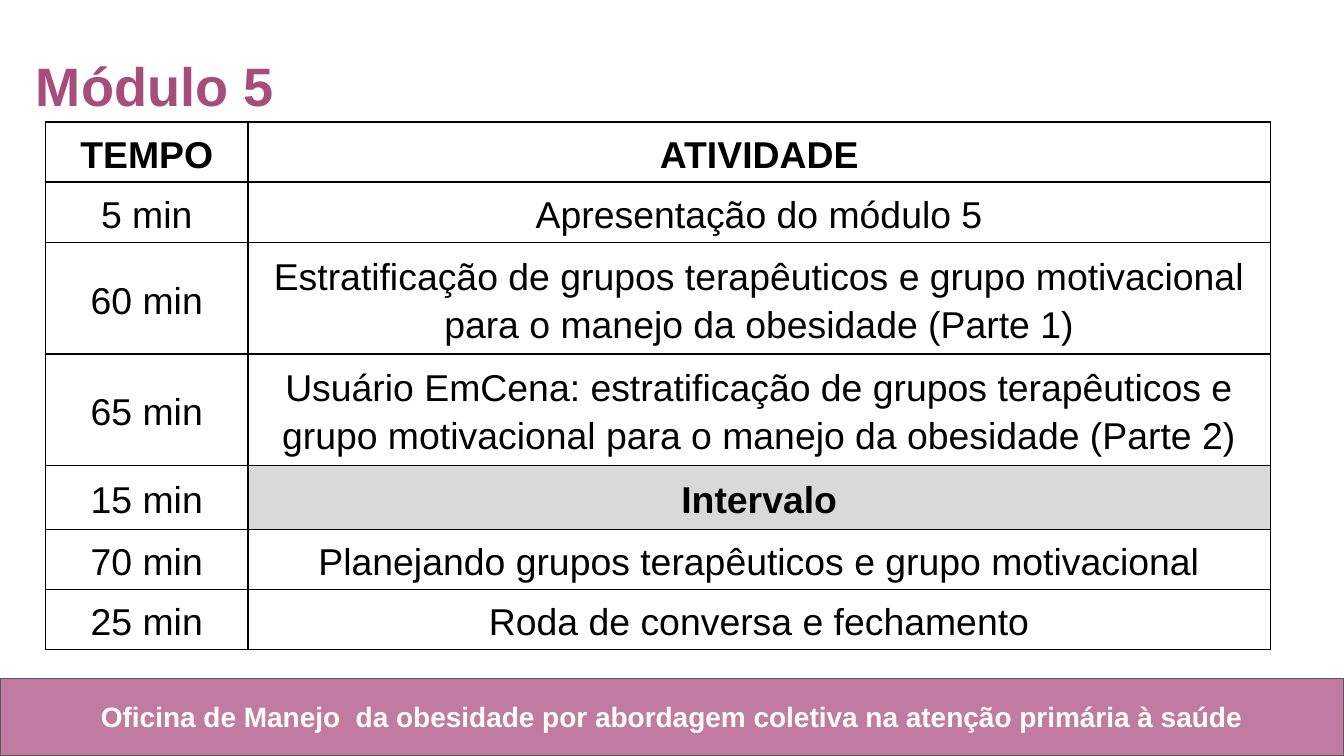
from typing import NamedTuple

from lxml import etree
from pptx import Presentation
from pptx import util as u
from pptx.dml import color
from pptx.enum import shapes, text
from pptx.oxml import ns

FONT = "Arial"
BLACK, WHITE, GREY = "000000", "FFFFFF", "D9D9D9"
PINK, PLUM, OUTLINE = "C27BA0", "A64D79", "595959"


class Box(NamedTuple):
    left: float
    top: float
    width: float
    height: float

    def lengths(self) -> list[u.Cm]:
        return [u.Cm(value) for value in self]


class Activity(NamedTuple):
    time: str
    title: str
    height: float = 1.12
    time_bold: bool = False
    title_bold: bool = False
    title_fill: str = WHITE


AGENDA = [
    Activity("TEMPO", "ATIVIDADE", time_bold=True, title_bold=True),
    Activity("5 min", "Apresentação do módulo 5"),
    Activity("60 min", "Estratificação de grupos terapêuticos e grupo motivacional "
             "para o manejo da obesidade (Parte 1)", 2.09),
    Activity("65 min", "Usuário EmCena: estratificação de grupos terapêuticos e "
             "grupo motivacional para o manejo da obesidade (Parte 2)", 2.09),
    Activity("15 min", "Intervalo", 1.21, title_bold=True, title_fill=GREY),
    Activity("70 min", "Planejando grupos terapêuticos e grupo motivacional"),
    Activity("25 min", "Roda de conversa e fechamento"),
]


def rgb(value: str) -> color.RGBColor:
    return color.RGBColor.from_string(value)


def write(frame, words: str, size: float, ink: str, bold: bool,
          align=text.PP_ALIGN.CENTER, spacing: float = 1.0) -> None:
    frame.word_wrap = True
    paragraph = frame.paragraphs[0]
    paragraph.text = words
    paragraph.alignment = align
    paragraph.line_spacing = spacing
    font = paragraph.font
    font.name, font.size, font.bold = FONT, u.Pt(size), bold
    font.color.rgb = rgb(ink)


def add_text(slide, box: Box, words: str, size: float, ink: str, **style) -> None:
    frame = slide.shapes.add_textbox(*box.lengths()).text_frame
    frame.margin_left = frame.margin_right = u.Cm(0.25)
    frame.margin_top = frame.margin_bottom = u.Cm(0.25)
    write(frame, words, size, ink, True, **style)


def add_band(slide, box: Box) -> None:
    band = slide.shapes.add_shape(shapes.MSO_SHAPE.RECTANGLE, *box.lengths())
    band.shadow.inherit = False
    band.fill.solid()
    band.fill.fore_color.rgb = rgb(PINK)
    band.line.color.rgb = rgb(OUTLINE)
    band.line.width = u.Pt(0.75)


def border(cell) -> None:
    properties = cell._tc.get_or_add_tcPr()
    for position, side in enumerate(("lnL", "lnR", "lnT", "lnB")):
        line = etree.Element(ns.qn(f"a:{side}"), w=str(u.Pt(1)))
        fill = etree.SubElement(line, ns.qn("a:solidFill"))
        etree.SubElement(fill, ns.qn("a:srgbClr"), val=BLACK)
        properties.insert(position, line)


def fill_cell(cell, words: str, bold: bool, fill: str) -> None:
    cell.margin_left = cell.margin_right = u.Cm(0.08)
    cell.margin_top = cell.margin_bottom = u.Cm(0.08)
    cell.vertical_anchor = text.MSO_ANCHOR.MIDDLE
    cell.fill.solid()
    cell.fill.fore_color.rgb = rgb(fill)
    write(cell.text_frame, words, 20, BLACK, bold, spacing=1.15)
    border(cell)


def add_agenda(slide, left: float, top: float, widths: tuple[float, float]) -> None:
    box = Box(left, top, sum(widths), sum(item.height for item in AGENDA))
    table = slide.shapes.add_table(len(AGENDA), len(widths), *box.lengths()).table
    table.first_row = table.horz_banding = False
    for column, width in zip(table.columns, widths):
        column.width = u.Cm(width)
    for row, item in zip(table.rows, AGENDA):
        row.height = u.Cm(item.height)
        time, title = row.cells
        fill_cell(time, item.time, item.time_bold, WHITE)
        fill_cell(title, item.title, item.title_bold, item.title_fill)


def main() -> None:
    deck = Presentation()
    deck.slide_width, deck.slide_height = u.Cm(25.4), u.Cm(14.29)
    slide = deck.slides.add_slide(deck.slide_layouts[6])
    add_band(slide, Box(0, 12.83, 25.4, 1.46))
    add_text(slide, Box(0.85, 12.98, 23.7, 1.15),
             "Oficina de Manejo  da obesidade por abordagem coletiva na atenção primária à saúde",
             15, WHITE)
    add_text(slide, Box(0.43, 0.56, 19.23, 1.88), "Módulo 5", 29, PLUM,
             align=text.PP_ALIGN.LEFT, spacing=1.15)
    add_agenda(slide, 0.86, 2.31, (3.83, 19.32))
    deck.save("out.pptx")


if __name__ == "__main__":
    main()
